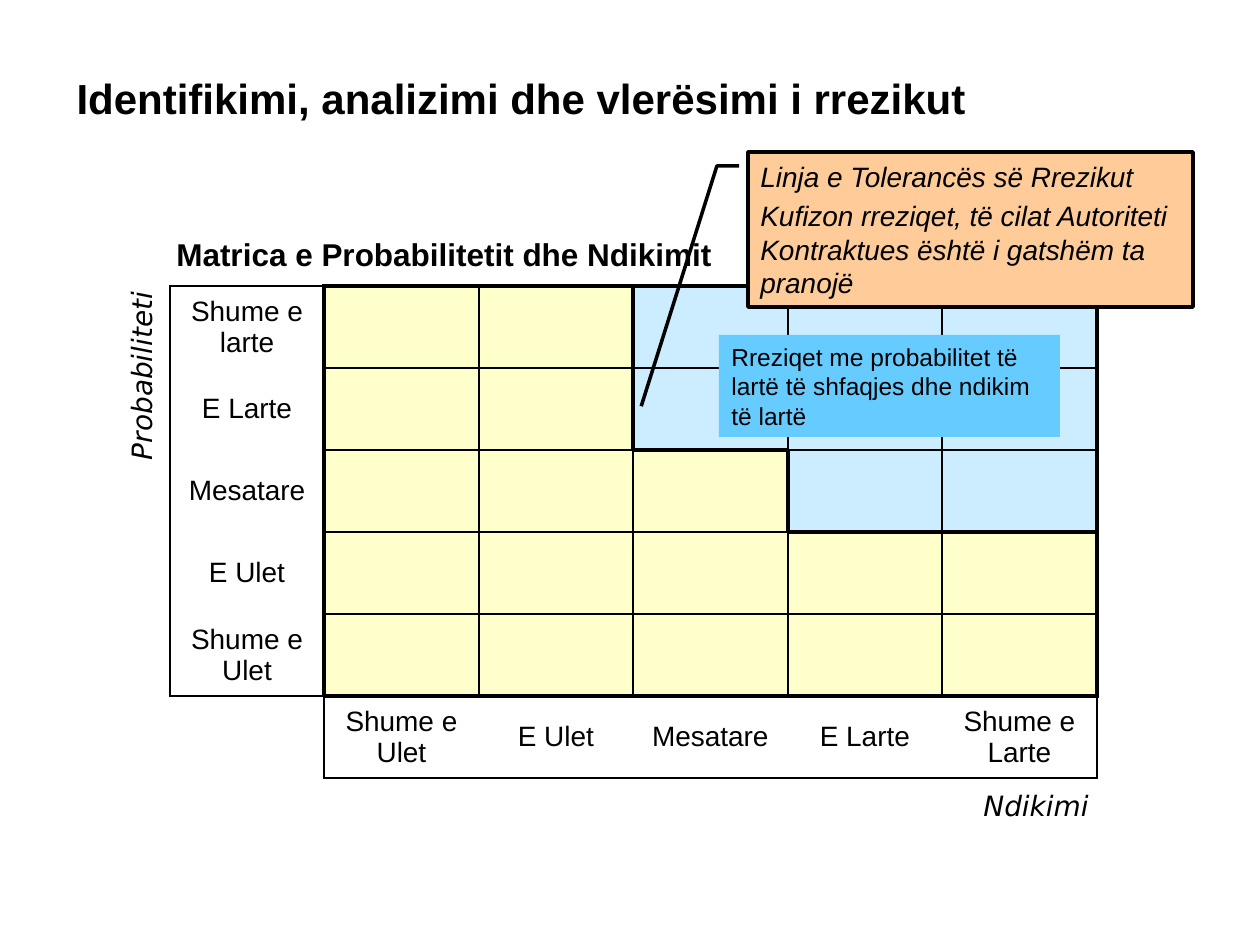
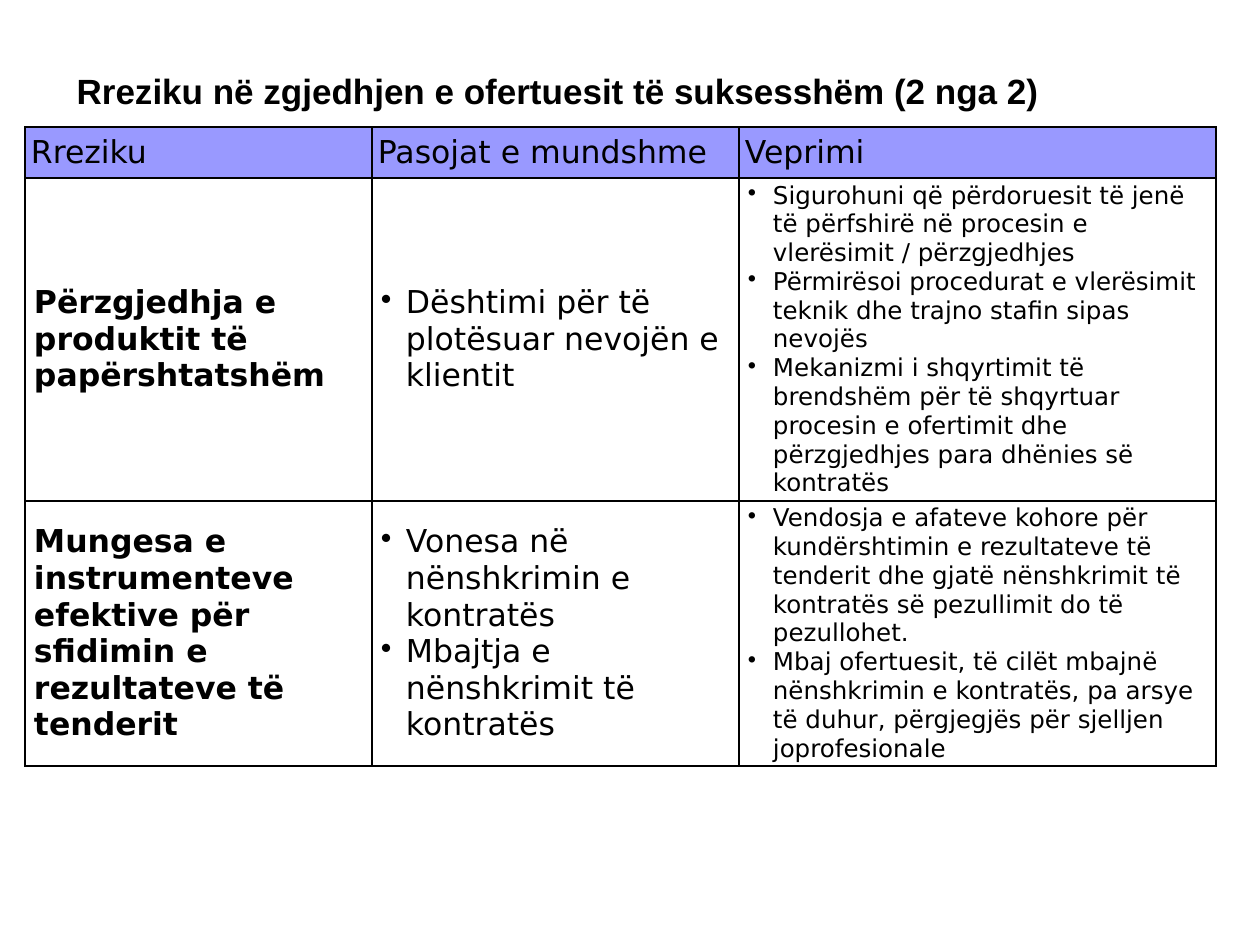
from lxml import etree
from pptx import Presentation
from pptx.dml.color import RGBColor
from pptx.enum.shapes import MSO_SHAPE
from pptx.enum.text import MSO_ANCHOR, MSO_AUTO_SIZE, PP_ALIGN
from pptx.oxml.ns import qn
from pptx.util import Emu, Pt

RECTANGLE, CALLOUT = MSO_SHAPE.RECTANGLE, MSO_SHAPE.LINE_CALLOUT_2
TOP, MIDDLE = MSO_ANCHOR.TOP, MSO_ANCHOR.MIDDLE
LEFT, CENTER = PP_ALIGN.LEFT, PP_ALIGN.CENTER
NO_AUTOFIT = MSO_AUTO_SIZE.NONE
TITLE_ONLY = 5

PX_PER_INCH = 126
COLORS = {
    "black": "000000",
    "white": "FFFFFF",
    "tolerated": "FFFFCC",
    "critical": "CCECFF",
    "callout": "FFCC99",
    "note": "66CCFF",
    "header": "9999FF",
}
SANS, WIDE = "Arial", "DejaVu Sans"
THIN, FRAME, TOLERANCE = 1, 2.25, 3

TITLE = {"name": SANS, "bold": True}
SUBTITLE = {"name": SANS, "size": Pt(18), "bold": True}
LEVEL = {"name": SANS, "size": Pt(16)}
AXIS = {"name": WIDE, "size": Pt(16), "italic": True}
CALLOUT_TEXT = {"name": SANS, "size": Pt(16), "italic": True}
NOTE = {"name": SANS, "size": Pt(14)}
HEADER = {"name": WIDE, "size": Pt(18)}
RISK = {**HEADER, "bold": True}
ACTION = {"name": WIDE, "size": Pt(14)}

PROBABILITIES = ["Shume e larte", "E Larte", "Mesatare", "E Ulet", "Shume e Ulet"]
IMPACTS = ["Shume e Ulet", "E Ulet", "Mesatare", "E Larte", "Shume e Larte"]
GRID = 5
FIRST_CRITICAL = [3, 3, 4, 6, 6]  # leftmost critical column of each matrix row

RISK_HEADINGS = ["Rreziku", "Pasojat e mundshme", "Veprimi"]
RISKS = [
    (
        ["Përzgjedhja e produktit të papërshtatshëm"],
        ["Dështimi për të plotësuar nevojën e klientit"],
        [
            "Sigurohuni që përdoruesit të jenë të përfshirë në procesin e "
            "vlerësimit / përzgjedhjes",
            "Përmirësoi procedurat e vlerësimit teknik dhe trajno stafin "
            "sipas nevojës",
            "Mekanizmi i shqyrtimit të brendshëm për të shqyrtuar procesin e "
            "ofertimit dhe përzgjedhjes para dhënies së kontratës",
        ],
    ),
    (
        ["Mungesa e instrumenteve efektive për sfidimin e rezultateve të tenderit"],
        ["Vonesa në nënshkrimin e kontratës", "Mbajtja e nënshkrimit të kontratës"],
        [
            "Vendosja e afateve kohore për kundërshtimin e rezultateve të "
            "tenderit dhe gjatë nënshkrimit të kontratës së pezullimit do të "
            "pezullohet.",
            "Mbaj ofertuesit, të cilët mbajnë nënshkrimin e kontratës, pa "
            "arsye të duhur, përgjegjës për sjelljen joprofesionale",
        ],
    ),
]


def px(value):
    return Emu(round(value * 914400 / PX_PER_INCH))


def color(name):
    return RGBColor.from_string(COLORS[name])


def paint(fill, name):
    if name is None:
        fill.background()
    else:
        fill.solid()
        fill.fore_color.rgb = color(name)


def add_bullet(para):
    properties = para._p.get_or_add_pPr()
    properties.set("marL", str(px(25)))
    properties.set("indent", str(-px(25)))
    etree.SubElement(properties, qn("a:buChar")).set("char", "•")


def write(frame, lines, font, align=LEFT, gap=0, bullets=False):
    for index, line in enumerate(lines):
        para = frame.add_paragraph() if index else frame.paragraphs[0]
        if bullets:
            add_bullet(para)
        para.alignment = align
        para.space_before = Pt(gap if index else 0)
        span = para.add_run()
        span.text = line
        for name, value in font.items():
            setattr(span.font, name, value)
        span.font.color.rgb = color("black")


def add_titled_slide(deck, text, top, size):
    slide = deck.slides.add_slide(deck.slide_layouts[TITLE_ONLY])
    title = slide.shapes.title
    title.left, title.top, title.width, title.height = map(px, (64, top, 1152, 63))
    frame = title.text_frame
    frame.auto_size = NO_AUTOFIT
    frame.vertical_anchor = TOP
    write(frame, [text], {**TITLE, "size": Pt(size)})
    return slide


def add_box(slide, place, lines, font, fill, kind=RECTANGLE, wrap=True, gap=0):
    box = slide.shapes.add_shape(kind, *map(px, place))
    box.shadow.inherit = False
    paint(box.fill, fill)
    box.line.fill.background()
    box.text_frame.word_wrap = wrap
    box.text_frame.vertical_anchor = MIDDLE
    write(box.text_frame, lines, font, gap=gap)
    return box


def add_plain_table(slide, corner, widths, heights):
    """Add a table without header or banding style."""
    place = (*corner, sum(widths), sum(heights))
    table = slide.shapes.add_table(len(heights), len(widths), *map(px, place)).table
    table.first_row = table.horz_banding = False
    for column, width in zip(table.columns, widths):
        column.width = px(width)
    for row, height in zip(table.rows, heights):
        row.height = px(height)
    return table


def set_borders(cell, left, right, top, bottom):
    """Draw the four cell edges; a width of zero hides an edge."""
    properties = cell._tc.get_or_add_tcPr()
    edges = {"a:lnL": left, "a:lnR": right, "a:lnT": top, "a:lnB": bottom}
    for index, (tag, width) in enumerate(edges.items()):
        line = etree.Element(qn(tag), w=str(Pt(width)))
        if width:
            fill = etree.SubElement(line, qn("a:solidFill"))
            etree.SubElement(fill, qn("a:srgbClr")).set("val", COLORS["black"])
        else:
            etree.SubElement(line, qn("a:noFill"))
        properties.insert(index, line)


def is_critical(row, column):
    return row < GRID and column >= FIRST_CRITICAL[row]


def vertical_edge(row, edge):
    """Width of the line left of column number edge."""
    if row == GRID:
        return THIN if edge in (1, GRID + 1) else 0
    if edge in (1, GRID + 1):
        return FRAME
    return TOLERANCE if edge == FIRST_CRITICAL[row] else THIN


def horizontal_edge(edge, column):
    """Width of the line above row number edge."""
    if column == 0:
        return THIN if edge in (0, GRID) else 0
    if edge in (0, GRID):
        return FRAME
    crossing = is_critical(edge - 1, column) and not is_critical(edge, column)
    return TOLERANCE if crossing else THIN


def add_matrix(slide):
    widths = [154 + column % 2 for column in range(GRID + 1)]
    table = add_plain_table(slide, (170, 286), widths, [82] * (GRID + 1))
    for row in range(GRID + 1):
        for column in range(GRID + 1):
            cell = table.cell(row, column)
            cell.vertical_anchor = MIDDLE
            fill = None
            if row < GRID and column > 0:
                fill = "critical" if is_critical(row, column) else "tolerated"
            elif row < GRID:
                write(cell.text_frame, [PROBABILITIES[row]], LEVEL, CENTER)
            elif column > 0:
                write(cell.text_frame, [IMPACTS[column - 1]], LEVEL, CENTER)
            paint(cell.fill, fill)
            set_borders(
                cell,
                vertical_edge(row, column) if (row, column) != (GRID, 0) else 0,
                vertical_edge(row, column + 1),
                horizontal_edge(row, column),
                horizontal_edge(row + 1, column) if (row, column) != (GRID, 0) else 0,
            )


def add_tolerance_callout(slide):
    lines = [
        "Linja e Tolerancës së Rrezikut",
        "Kufizon rreziqet, të cilat Autoriteti Kontraktues është i gatshëm ta pranojë",
    ]
    place = (748, 152, 445, 155)
    box = add_box(slide, place, lines, CALLOUT_TEXT, "callout", CALLOUT, gap=3)
    for index, value in enumerate((0.09, -0.02, 0.09, -0.07, 1.64, -0.24)):
        box.adjustments[index] = value
    box.line.color.rgb = color("black")
    box.line.width = Pt(2)


def fill_risk_cell(cell, lines, font, fill, margins, bullets=False):
    across, down = map(px, margins)
    cell.margin_left = cell.margin_right = across
    cell.margin_top = cell.margin_bottom = down
    cell.vertical_anchor = MIDDLE
    paint(cell.fill, fill)
    write(cell.text_frame, lines, font, bullets=bullets)
    set_borders(cell, THIN, THIN, THIN, THIN)


def add_risk_table(slide):
    table = add_plain_table(slide, (25, 127), [347, 367, 477], [51, 323, 265])
    for column, heading in enumerate(RISK_HEADINGS):
        fill_risk_cell(table.cell(0, column), [heading], HEADER, "header", (6, 6))
    for row, risk in enumerate(RISKS, 1):
        for column, (lines, font) in enumerate(zip(risk, (RISK, HEADER, ACTION))):
            cell = table.cell(row, column)
            fill_risk_cell(cell, lines, font, "white", (9, 0), bullets=column > 0)


def build_matrix_slide(deck):
    title = "Identifikimi, analizimi dhe vlerësimi i rrezikut"
    slide = add_titled_slide(deck, title, 66, 24)
    add_matrix(slide)
    probability = add_box(
        slide, (44, 352, 194, 47), ["Probabiliteti"], AXIS, "white", wrap=False
    )
    probability.rotation = 270
    add_box(slide, (971, 782, 132, 47), ["Ndikimi"], AXIS, "white", wrap=False)
    add_tolerance_callout(slide)
    note = "Rreziqet me probabilitet të lartë të shfaqjes dhe ndikim të lartë"
    add_box(slide, (719, 335, 341, 102), [note], NOTE, "note")
    subtitle = slide.shapes.add_textbox(*map(px, (164, 229, 566, 50)))
    subtitle.text_frame.word_wrap = False
    write(subtitle.text_frame, ["Matrica e Probabilitetit dhe Ndikimit"], SUBTITLE)


def build_risk_slide(deck):
    title = "Rreziku në zgjedhjen e ofertuesit të suksesshëm (2 nga 2)"
    add_risk_table(add_titled_slide(deck, title, 63, 20))


def main():
    deck = Presentation()
    deck.slide_width, deck.slide_height = px(1260), px(945)
    build_matrix_slide(deck)
    build_risk_slide(deck)
    deck.save("out.pptx")


if __name__ == "__main__":
    main()
